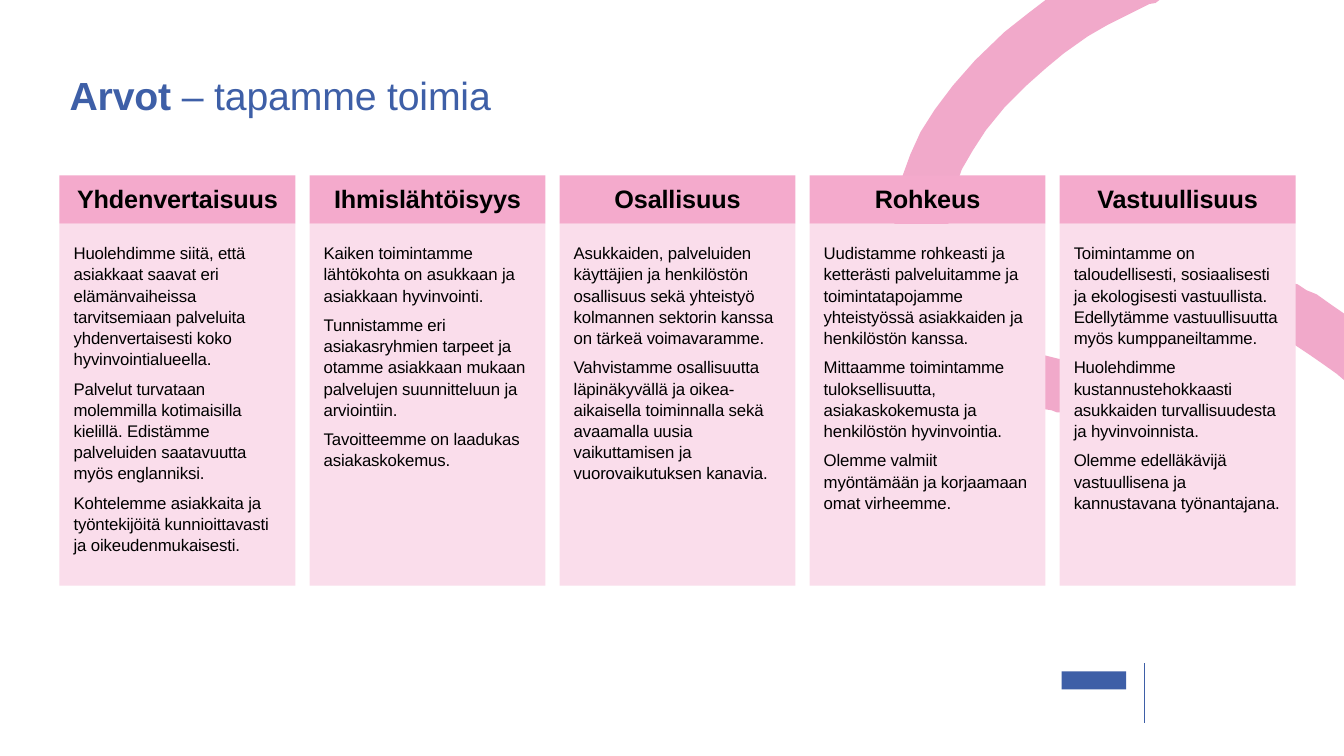
from dataclasses import dataclass

from lxml import etree
from pptx import Presentation
from pptx import util as u
from pptx.dml.color import RGBColor
from pptx.enum import shapes, text
from pptx.oxml import ns

PX = 9144  # EMU per px, 100 px to the inch


@dataclass(frozen=True)
class Theme:
    font: str = "Arial"
    blue: str = "3E5FA7"
    black: str = "000000"
    header: str = "F4AACC"
    card: str = "FADDEB"
    ring: str = "F1A9CA"
    title_pt: int = 28
    header_pt: int = 18
    body_pt: int = 12
    para_gap_pt: int = 6
    line_spacing: float = 1.05
    tracking: int = -10  # hundredths of a point


@dataclass(frozen=True)
class Box:
    left: int
    top: int
    width: int
    height: int

    def emu(self) -> list[int]:
        return [v * PX for v in (self.left, self.top, self.width, self.height)]


@dataclass(frozen=True)
class Value:
    name: str
    paragraphs: tuple[str, ...]


T = Theme()

# Column grid
FIRST_LEFT, PITCH, COLUMN_WIDTH = 59, 248, 234
HEADER_TOP, HEADER_HEIGHT, CARD_HEIGHT = 174, 48, 359

VALUES = (
    Value("Yhdenvertaisuus", (
        "Huolehdimme siitä, että asiakkaat saavat eri elämänvaiheissa tarvitsemiaan "
        "palveluita yhdenvertaisesti koko hyvinvointialueella.",
        "Palvelut turvataan molemmilla kotimaisilla kielillä. Edistämme palveluiden "
        "saatavuutta myös englanniksi.",
        "Kohtelemme asiakkaita ja työntekijöitä kunnioittavasti ja oikeudenmukaisesti.",
    )),
    Value("Ihmislähtöisyys", (
        "Kaiken toimintamme lähtökohta on asukkaan ja asiakkaan hyvinvointi.",
        "Tunnistamme eri asiakasryhmien tarpeet ja otamme asiakkaan mukaan "
        "palvelujen suunnitteluun ja arviointiin.",
        "Tavoitteemme on laadukas asiakaskokemus.",
    )),
    Value("Osallisuus", (
        "Asukkaiden, palveluiden käyttäjien ja henkilöstön osallisuus sekä yhteistyö "
        "kolmannen sektorin kanssa on tärkeä voimavaramme.",
        "Vahvistamme osallisuutta läpinäkyvällä ja oikea-aikaisella toiminnalla sekä "
        "avaamalla uusia vaikuttamisen ja vuorovaikutuksen kanavia.",
    )),
    Value("Rohkeus", (
        "Uudistamme rohkeasti ja ketterästi palveluitamme ja toimintatapojamme "
        "yhteistyössä asiakkaiden ja henkilöstön kanssa.",
        "Mittaamme toimintamme tuloksellisuutta, asiakaskokemusta ja henkilöstön "
        "hyvinvointia.",
        "Olemme valmiit myöntämään ja korjaamaan omat virheemme.",
    )),
    Value("Vastuullisuus", (
        "Toimintamme on taloudellisesti, sosiaalisesti ja ekologisesti vastuullista. "
        "Edellytämme vastuullisuutta myös kumppaneiltamme.",
        "Huolehdimme kustannustehokkaasti asukkaiden turvallisuudesta ja "
        "hyvinvoinnista.",
        "Olemme edelläkävijä vastuullisena ja kannustavana työnantajana.",
    )),
)

# Ring band: outer edge from the top, round to the right, then back inside
RING = (
    (1037, 0), (1020, 13), (996, 32), (967, 60), (945, 85), (927, 109), (913, 131),
    (903, 153), (895, 175), (890, 196), (887, 220), (888, 247), (892, 267),
    (899, 293), (911, 318), (923, 338), (940, 359), (960, 375), (982, 389),
    (1010, 402), (1043, 407), (1048, 409), (1087, 409), (1098, 407), (1137, 396),
    (1165, 381), (1195, 363), (1225, 342), (1250, 329), (1260, 329), (1278, 338),
    (1299, 352), (1312, 361), (1326, 371), (1333, 377), (1333, 311), (1320, 302),
    (1306, 292), (1296, 288), (1287, 282), (1267, 277), (1257, 275), (1241, 277),
    (1216, 285), (1184, 306), (1147, 329), (1116, 347), (1083, 356), (1050, 356),
    (1022, 349), (995, 335), (972, 314), (954, 285), (945, 260), (940, 231),
    (942, 207), (947, 188), (954, 168), (965, 149), (978, 129), (996, 107),
    (1019, 84), (1037, 68), (1055, 53), (1079, 36), (1098, 25), (1116, 16),
    (1140, 4), (1146, 3), (1150, 0),
)


def paint(sp, colour: str) -> None:
    sp.shadow.inherit = False
    sp.fill.solid()
    sp.fill.fore_color.rgb = RGBColor.from_string(colour)
    sp.line.fill.background()


def add_run(p, words: str, size: int, colour: str, bold: bool = False) -> None:
    r = p.add_run()
    r.text = words
    r.font.name = T.font
    r.font.size = u.Pt(size)
    r.font.bold = bold
    r.font.color.rgb = RGBColor.from_string(colour)
    r._r.get_or_add_rPr().set("spc", str(T.tracking))


def set_frame(tf, top: int, left: int = 0, right: int = 0) -> None:
    tf.word_wrap = True
    tf.auto_size = text.MSO_AUTO_SIZE.NONE
    tf.vertical_anchor = text.MSO_ANCHOR.TOP
    tf.margin_top, tf.margin_bottom = top * PX, 0
    tf.margin_left, tf.margin_right = left * PX, right * PX


def add_rect(s, box: Box, colour: str):
    sp = s.shapes.add_shape(shapes.MSO_SHAPE.RECTANGLE, *box.emu())
    paint(sp, colour)
    return sp


def add_ring(s) -> None:
    fb = s.shapes.build_freeform(*RING[0], scale=PX)
    fb.add_line_segments(RING[1:], close=True)
    paint(fb.convert_to_shape(), T.ring)


def add_footer(s) -> None:
    add_rect(s, Box(1053, 666, 64, 18), T.blue)
    divider = s.shapes.add_connector(
        shapes.MSO_CONNECTOR.STRAIGHT, *[v * PX for v in (1135, 658, 1135, 717)])
    divider.line.color.rgb = RGBColor.from_string(T.blue)
    divider.line.width = u.Pt(0.5)
    etree.SubElement(divider.element.spPr, ns.qn("a:effectLst"))


def add_title(s) -> None:
    title = s.shapes.title
    title.left, title.top, title.width, title.height = Box(69, 63, 533, 55).emu()
    set_frame(title.text_frame, top=8)
    p = title.text_frame.paragraphs[0]
    p.alignment = text.PP_ALIGN.LEFT
    add_run(p, "Arvot ", T.title_pt, T.blue, bold=True)
    add_run(p, "– tapamme toimia", T.title_pt, T.blue)


def add_column(s, value: Value, left: int) -> None:
    card = add_rect(s, Box(left, HEADER_TOP + HEADER_HEIGHT, COLUMN_WIDTH, CARD_HEIGHT), T.card)
    tf = card.text_frame
    set_frame(tf, top=18, left=14, right=12)
    for i, words in enumerate(value.paragraphs):
        p = tf.add_paragraph() if i else tf.paragraphs[0]
        p.alignment = text.PP_ALIGN.LEFT
        p.line_spacing = T.line_spacing
        p.space_before = u.Pt(T.para_gap_pt if i else 0)
        add_run(p, words, T.body_pt, T.black)

    header = add_rect(s, Box(left, HEADER_TOP, COLUMN_WIDTH, HEADER_HEIGHT), T.header)
    set_frame(header.text_frame, top=8)
    p = header.text_frame.paragraphs[0]
    p.alignment = text.PP_ALIGN.CENTER
    add_run(p, value.name, T.header_pt, T.black, bold=True)


def main() -> None:
    prs = Presentation()
    prs.slide_width, prs.slide_height = 1333 * PX, 750 * PX
    s = prs.slides.add_slide(prs.slide_layouts[5])  # title only

    # Background and footer
    add_footer(s)
    add_ring(s)

    # Title and value columns
    add_title(s)
    for i, value in enumerate(VALUES):
        add_column(s, value, FIRST_LEFT + i * PITCH)

    prs.save("out.pptx")


if __name__ == "__main__":
    main()
